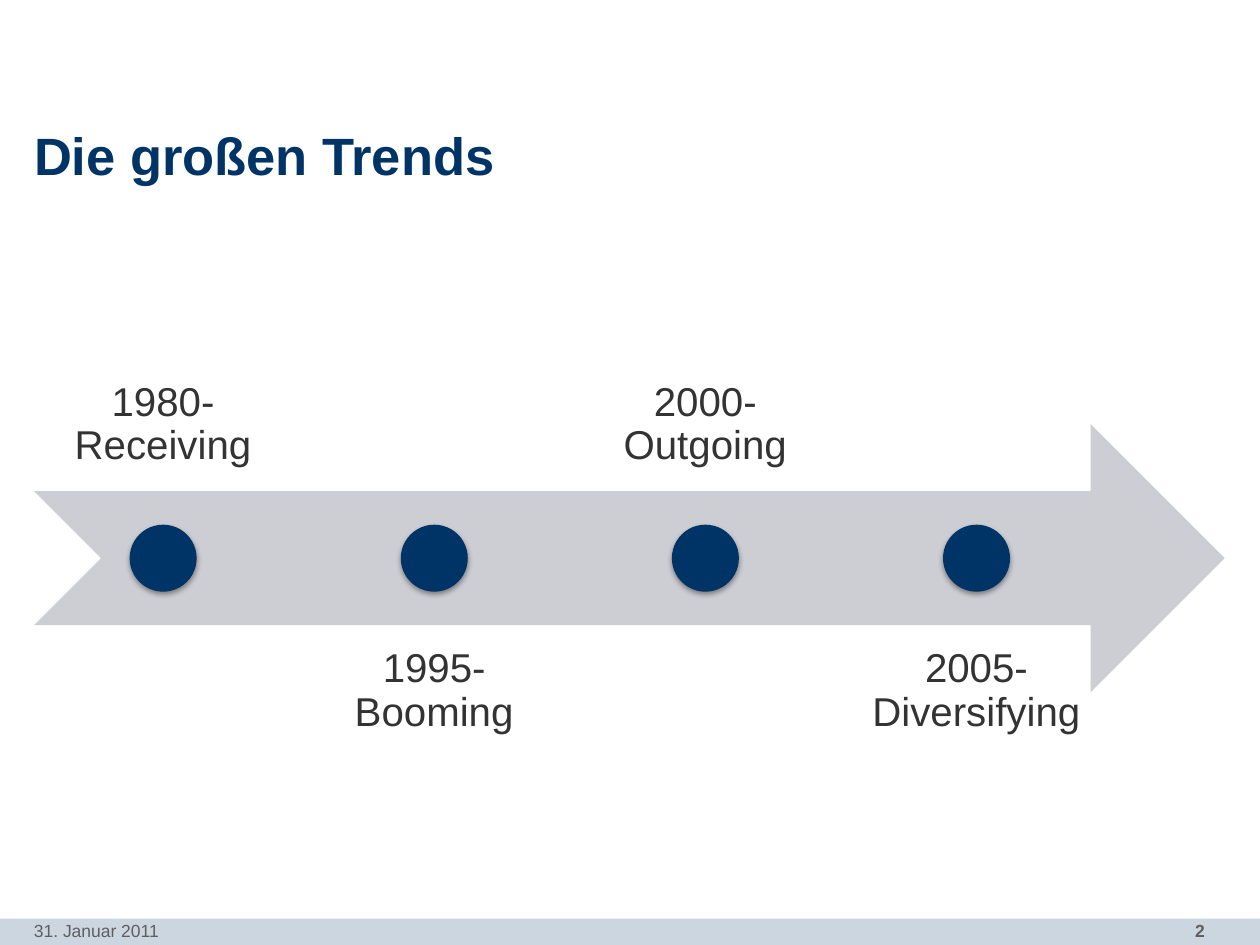
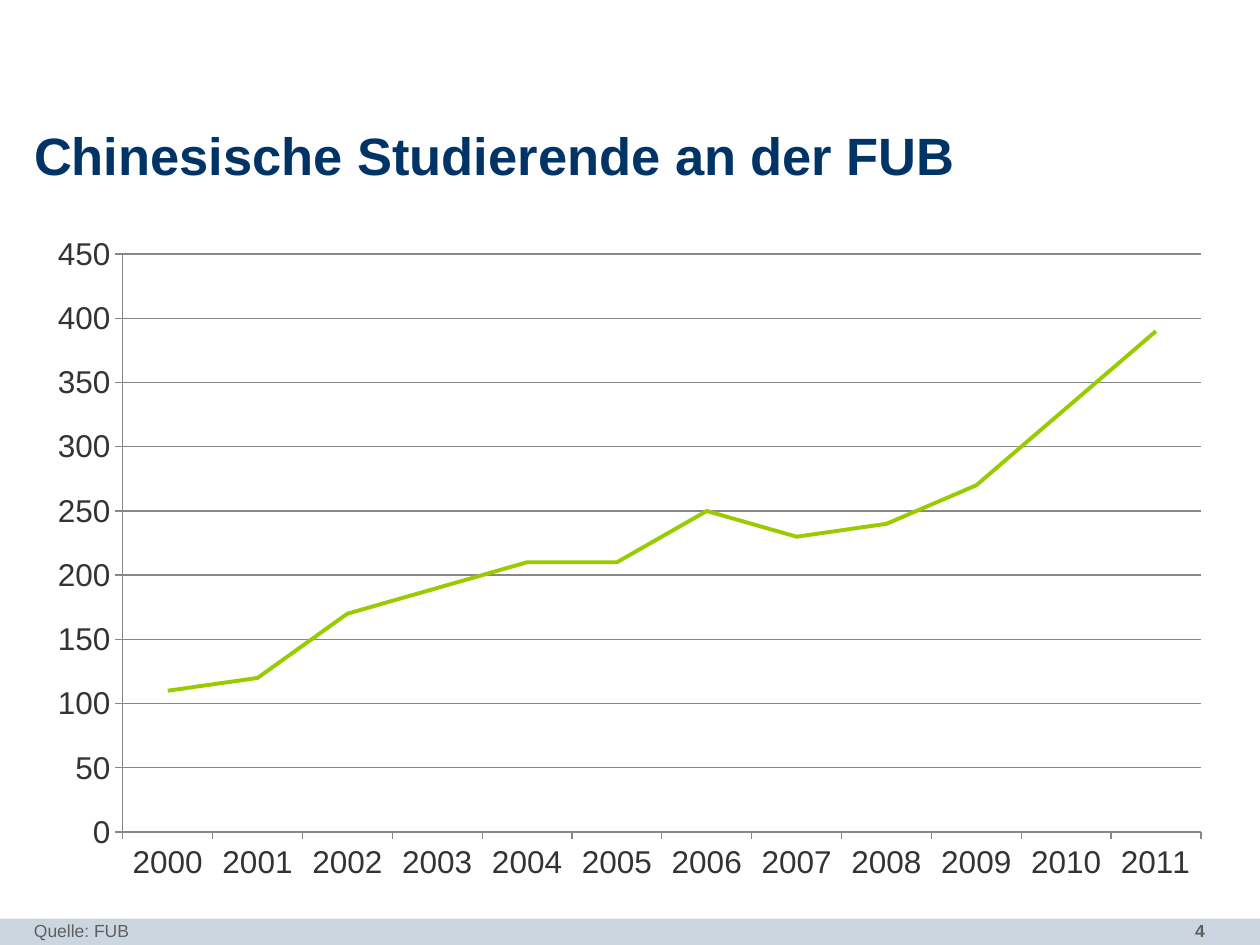
from collections import namedtuple

from lxml.etree import SubElement
from pptx import Presentation
from pptx.chart.data import CategoryChartData
from pptx.dml.color import RGBColor
from pptx.enum.chart import XL_CHART_TYPE, XL_MARKER_STYLE, XL_TICK_MARK
from pptx.enum.shapes import MSO_SHAPE
from pptx.enum.text import MSO_ANCHOR, MSO_AUTO_SIZE, PP_ALIGN
from pptx.oxml.ns import qn
from pptx.util import Inches, Pt

Box = namedtuple("Box", "left top width height")

COLORS = {
    "navy": "003366",
    "band": "CCD6E0",
    "footer": "5F5F5F",
    "text": "333333",
    "arrow": "CCCED3",
    "grid": "878787",
    "line": "99CC00",
    "shadow": "000000",
}
FONT = "Arial"
WIDTH, HEIGHT = 10, 7.5
MARGIN = 0.27
TITLE_BOX = Box(MARGIN, 1.03, 9.45, 0.47)
CONTENT_BOX = Box(MARGIN, 1.77, 9.45, 5.32)
BAND_BOX = Box(0, 7.29, WIDTH, 0.21)
NOTE_BOX = Box(MARGIN, 7.25, 6.54, 0.25)
NUMBER_BOX = Box(8.32, 7.25, 1.34, 0.26)

TRENDS = ["1980- Receiving", "1995- Booming", "2000- Outgoing", "2005- Diversifying"]
STUDENTS = [110, 120, 170, 190, 210, 210, 250, 230, 240, 270, 330, 390]
FIRST_YEAR = 2000


def color(name):
    return RGBColor.from_string(COLORS[name])


def inches(box):
    return [Inches(length) for length in box]


def style_font(font, size, color_name, bold=False):
    font.name = FONT
    font.size = Pt(size)
    font.bold = bold
    font.color.rgb = color(color_name)


def set_insets(frame, horizontal, vertical):
    frame.margin_left = frame.margin_right = Inches(horizontal)
    frame.margin_top = frame.margin_bottom = Inches(vertical)


def add_text(slide, box, text, size, color_name, insets, align=PP_ALIGN.LEFT,
             anchor=MSO_ANCHOR.TOP, bold=False, spacing=1.0):
    frame = slide.shapes.add_textbox(*inches(box)).text_frame
    frame.word_wrap = True
    frame.vertical_anchor = anchor
    set_insets(frame, *insets)
    paragraph = frame.paragraphs[0]
    paragraph.text = text
    paragraph.alignment = align
    paragraph.line_spacing = spacing
    style_font(paragraph.font, size, color_name, bold)


def add_filled_shape(slide, kind, box, color_name):
    shape = slide.shapes.add_shape(kind, *inches(box))
    shape.shadow.inherit = False
    shape.fill.solid()
    shape.fill.fore_color.rgb = color(color_name)
    shape.line.fill.background()
    return shape


def add_soft_shadow(shape):
    effects = shape.element.spPr.find(qn("a:effectLst"))
    shadow = SubElement(effects, qn("a:outerShdw"), blurRad=str(Pt(3.1)),
                        dist=str(Pt(1.6)), dir="5400000", rotWithShape="0")
    shade = SubElement(shadow, qn("a:srgbClr"), val=COLORS["shadow"])
    SubElement(shade, qn("a:alpha"), val="38000")


def add_title(slide, box, text):
    title = slide.shapes.title
    title.left, title.top, title.width, title.height = inches(box)
    frame = title.text_frame
    frame.auto_size = MSO_AUTO_SIZE.NONE
    frame.vertical_anchor = MSO_ANCHOR.MIDDLE
    set_insets(frame, 0, 0)
    paragraph = frame.paragraphs[0]
    paragraph.text = text
    paragraph.alignment = PP_ALIGN.LEFT
    paragraph.line_spacing = 0.85
    style_font(paragraph.font, 30, "navy", bold=True)


def add_footer(slide, note, number):
    add_filled_shape(slide, MSO_SHAPE.RECTANGLE, BAND_BOX, "band")
    add_text(slide, NUMBER_BOX, number, 10, "footer", (0.1, 0.05),
             align=PP_ALIGN.RIGHT, bold=True)
    add_text(slide, NOTE_BOX, note, 10, "footer", (0, 0.05))


def add_slide(presentation, title, note, number):
    slide = presentation.slides.add_slide(presentation.slide_layouts[5])
    add_title(slide, TITLE_BOX, title)
    add_footer(slide, note, number)
    return slide


def add_timeline(slide, box, labels):
    row = box.height * 0.4
    arrow = Box(box.left, box.top + box.height * 0.3, box.width, row)
    add_filled_shape(slide, MSO_SHAPE.NOTCHED_RIGHT_ARROW, arrow, "arrow")
    gap = 0.05
    count = len(labels)
    column = box.width * 0.9 / (count + gap * (count - 1))
    dot = row / 4
    for index, label in enumerate(labels):
        left = box.left + index * column * (1 + gap)
        above = index % 2 == 0
        top = box.top if above else box.top + box.height - row
        add_text(slide, Box(left, top, column, row), label, 23, "text", (0.18, 0.18),
                 align=PP_ALIGN.CENTER, spacing=0.9,
                 anchor=MSO_ANCHOR.BOTTOM if above else MSO_ANCHOR.TOP)
        dot_box = Box(left + (column - dot) / 2, box.top + (box.height - dot) / 2, dot, dot)
        add_soft_shadow(add_filled_shape(slide, MSO_SHAPE.OVAL, dot_box, "navy"))


def add_line_chart(slide, box, first_year, values):
    data = CategoryChartData()
    data.categories = [str(first_year + index) for index in range(len(values))]
    data.add_series("Series 1", values)
    chart = slide.shapes.add_chart(XL_CHART_TYPE.LINE, *inches(box), data).chart
    chart.has_legend = False
    chart.has_title = False
    style_font(chart.font, 18, "text")
    for axis in (chart.category_axis, chart.value_axis):
        axis.major_tick_mark = XL_TICK_MARK.OUTSIDE
        axis.format.line.color.rgb = color("grid")
        axis.format.line.width = Pt(0.75)
    value_axis = chart.value_axis
    value_axis.minimum_scale, value_axis.maximum_scale = 0, 450
    value_axis.major_unit = 50
    value_axis.has_major_gridlines = True
    value_axis.major_gridlines.format.line.color.rgb = color("grid")
    value_axis.major_gridlines.format.line.width = Pt(0.75)
    plot = chart.plots[0]
    plot.vary_by_categories = False
    series = plot.series[0]
    series.smooth = False
    series.marker.style = XL_MARKER_STYLE.NONE
    series.format.line.color.rgb = color("line")
    series.format.line.width = Pt(2.25)


def main():
    presentation = Presentation()
    presentation.slide_width, presentation.slide_height = Inches(WIDTH), Inches(HEIGHT)
    trends = add_slide(presentation, "Die großen Trends", "31. Januar 2011", "2")
    add_timeline(trends, CONTENT_BOX, TRENDS)
    students = add_slide(presentation, "Chinesische Studierende an der FUB", "Quelle: FUB", "4")
    add_line_chart(students, CONTENT_BOX, FIRST_YEAR, STUDENTS)
    presentation.save("out.pptx")


if __name__ == "__main__":
    main()
